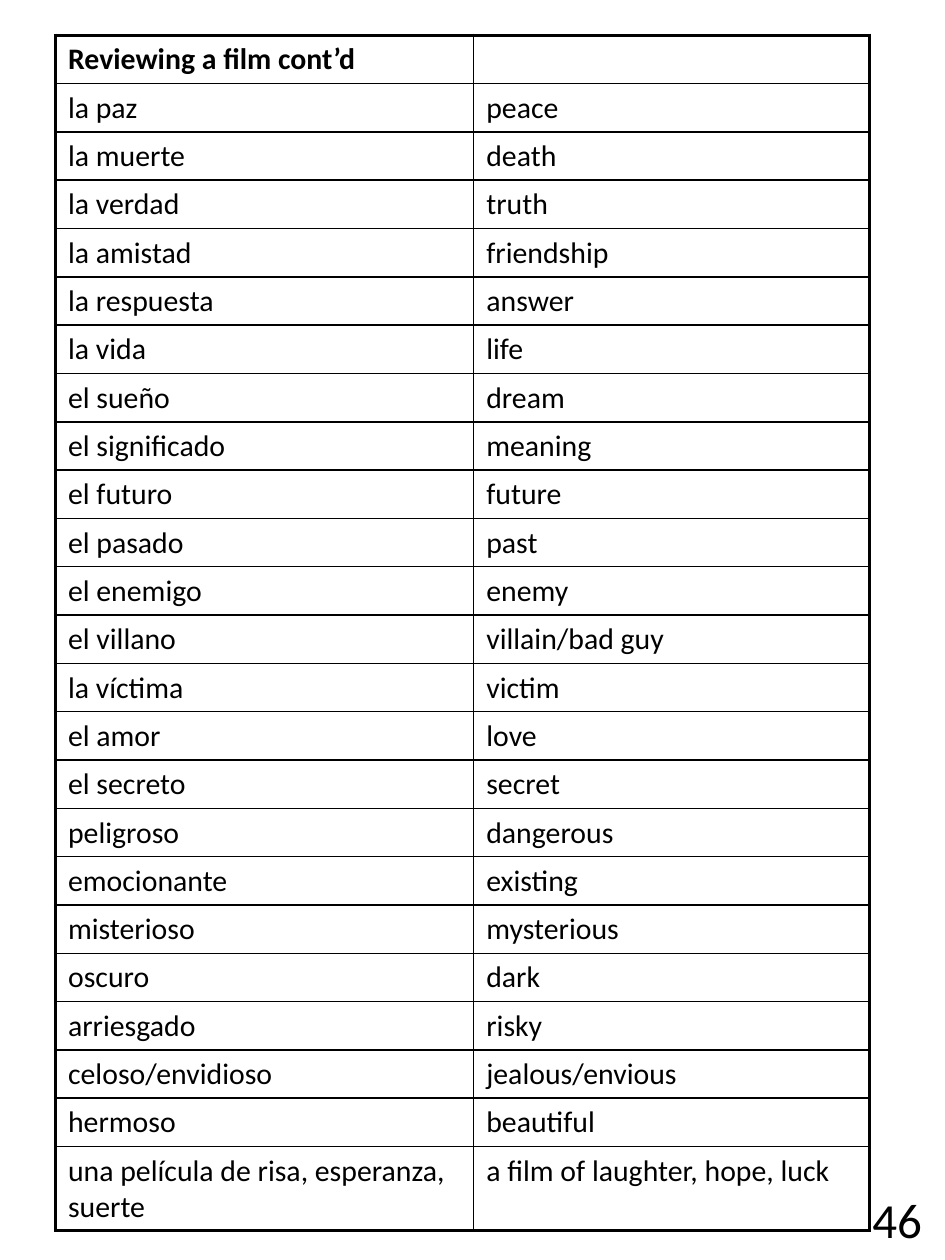
from lxml.etree import SubElement
from pptx import Presentation
from pptx.dml.color import RGBColor
from pptx.enum.text import MSO_AUTO_SIZE, PP_ALIGN
from pptx.oxml.ns import qn
from pptx.util import Inches, Pt

BLACK = RGBColor(0x00, 0x00, 0x00)
FONT = "Calibri"
TEXT_SIZE, PAGE_SIZE = 17, 28
THICK, THIN = 2.25, 1

LEFT, TOP = 0.44, 0.28
COL_WIDTHS = (3.32, 3.14)
TABLE_HEIGHT, LAST_HEIGHT = 9.48, 0.66
BOTTOM_MARGIN = 0.04

VOCABULARY = [
    ("Reviewing a film cont’d", ""),
    ("la paz", "peace"),
    ("la muerte", "death"),
    ("la verdad", "truth"),
    ("la amistad", "friendship"),
    ("la respuesta", "answer"),
    ("la vida", "life"),
    ("el sueño", "dream"),
    ("el significado", "meaning"),
    ("el futuro", "future"),
    ("el pasado", "past"),
    ("el enemigo", "enemy"),
    ("el villano", "villain/bad guy"),
    ("la víctima", "victim"),
    ("el amor", "love"),
    ("el secreto", "secret"),
    ("peligroso", "dangerous"),
    ("emocionante", "existing"),
    ("misterioso", "mysterious"),
    ("oscuro", "dark"),
    ("arriesgado", "risky"),
    ("celoso/envidioso", "jealous/envious"),
    ("hermoso", "beautiful"),
    ("una película de risa, esperanza, suerte", "a film of laughter, hope, luck"),
]


def space_before(p, percent):
    """Set paragraph spacing as a share of the line height."""
    spacing = SubElement(p._p.get_or_add_pPr(), qn("a:spcBef"))
    SubElement(spacing, qn("a:spcPct"), val=str(percent * 1000))


def add_run(p, text, size, bold=False):
    r = p.add_run()
    r.text = text
    r.font.name = FONT
    r.font.size = Pt(size)
    r.font.bold = bold
    r.font.color.rgb = BLACK


def set_borders(cell, widths):
    """Draw the left, right, top and bottom lines of a cell."""
    tc_pr = cell._tc.get_or_add_tcPr()
    for side, width in zip("LRTB", widths):
        ln = SubElement(tc_pr, qn(f"a:ln{side}"), w=str(Pt(width)))
        fill = SubElement(ln, qn("a:solidFill"))
        SubElement(fill, qn("a:srgbClr"), val=str(BLACK))


def fill_cell(cell, text, bold):
    # A slightly smaller margin lets the rows keep their set height
    cell.margin_bottom = Inches(BOTTOM_MARGIN)
    p = cell.text_frame.paragraphs[0]
    space_before(p, 20)
    if text:
        add_run(p, text, TEXT_SIZE, bold)
    else:
        # An empty cell keeps the line height of the others
        SubElement(p._p, qn("a:endParaRPr"), sz=str(TEXT_SIZE * 100))


def add_vocabulary(s):
    last_row, last_col = len(VOCABULARY) - 1, len(COL_WIDTHS) - 1
    table = s.shapes.add_table(
        last_row + 1, last_col + 1, Inches(LEFT), Inches(TOP),
        Inches(sum(COL_WIDTHS)), Inches(TABLE_HEIGHT)).table
    table.first_row = table.horz_banding = False
    for column, width in zip(table.columns, COL_WIDTHS):
        column.width = Inches(width)

    row_height = (TABLE_HEIGHT - LAST_HEIGHT) / last_row
    for i, words in enumerate(VOCABULARY):
        table.rows[i].height = Inches(LAST_HEIGHT if i == last_row else row_height)
        for j, text in enumerate(words):
            cell = table.cell(i, j)
            fill_cell(cell, text, bold=i == 0)
            # Thick lines run only around the outside
            outer = (j == 0, j == last_col, i == 0, i == last_row)
            set_borders(cell, [THICK if edge else THIN for edge in outer])
            cell.fill.background()


def add_page_number(s, number):
    sp = s.shapes.add_textbox(Inches(6.74), Inches(9.39), Inches(0.76), Inches(0.57))
    tf = sp.text_frame
    tf.word_wrap = True
    tf.auto_size = MSO_AUTO_SIZE.SHAPE_TO_FIT_TEXT
    p = tf.paragraphs[0]
    p.alignment = PP_ALIGN.CENTER
    space_before(p, 50)
    add_run(p, number, PAGE_SIZE)


def main():
    prs = Presentation()
    prs.slide_width, prs.slide_height = Inches(7.5), Inches(10)
    s = prs.slides.add_slide(prs.slide_layouts[6])
    add_vocabulary(s)
    add_page_number(s, "46")
    prs.save("out.pptx")


if __name__ == "__main__":
    main()
